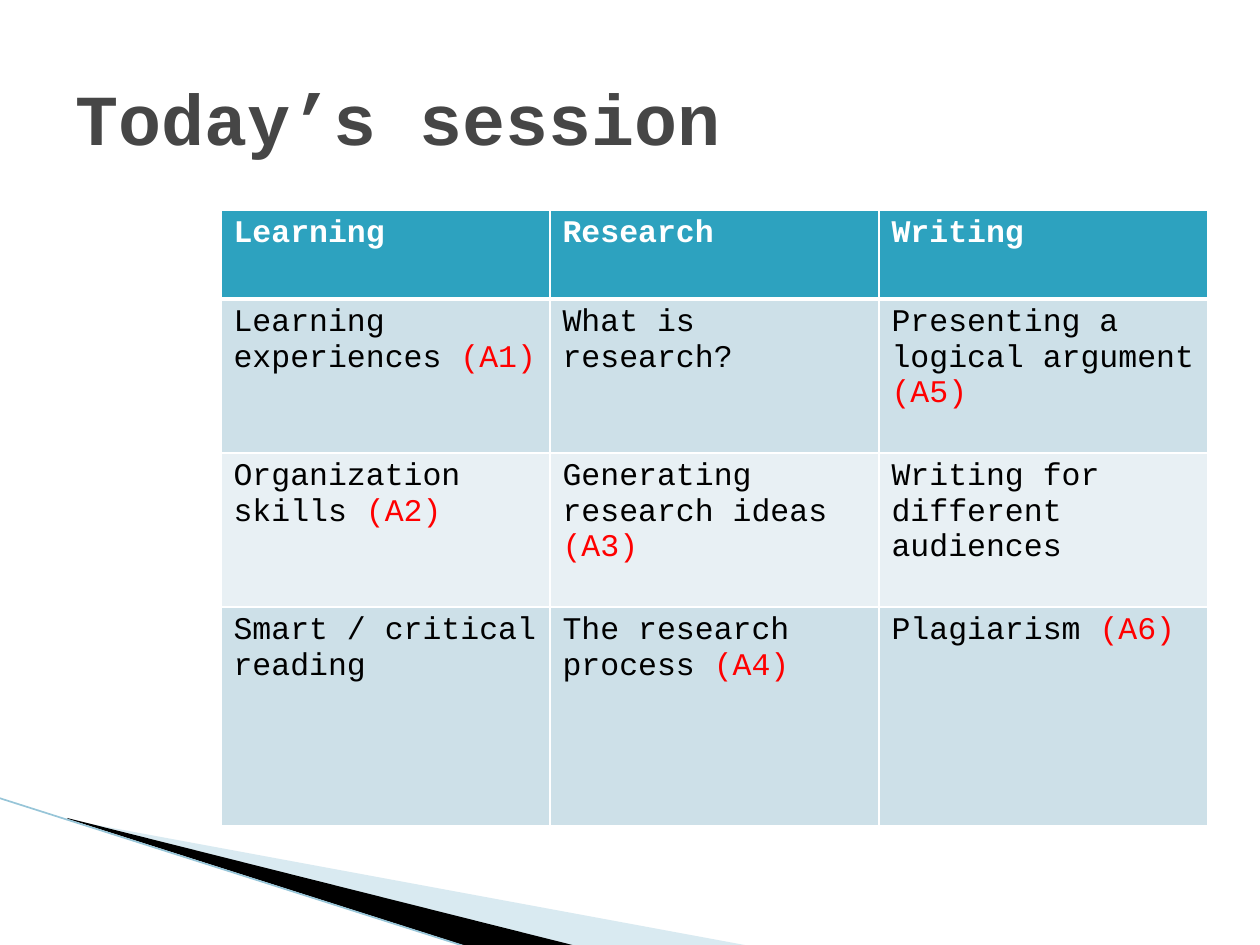
from lxml.etree import SubElement
from pptx import Presentation
from pptx.dml.color import RGBColor
from pptx.enum.shapes import MSO_CONNECTOR
from pptx.enum.text import MSO_ANCHOR
from pptx.oxml import parse_xml
from pptx.oxml.ns import nsdecls, qn
from pptx.util import Pt

TITLE = "Today’s session"
HEADER = ["Learning", "Research", "Writing"]
ROWS = [
    [("Learning experiences ", "(A1)"), ("What is research?", ""),
     ("Presenting a logical argument ", "(A5)")],
    [("Organization skills ", "(A2)"), ("Generating research ideas ", "(A3)"),
     ("Writing for different audiences", "")],
    [("Smart / critical reading", ""), ("The research process ", "(A4)"),
     ("Plagiarism ", "(A6)")],
]
ROW_HEIGHTS = [89, 154, 154, 219]
COL_WIDTH = 329
TABLE_LEFT, TABLE_TOP = 221, 210

WHITE = RGBColor(0xFF, 0xFF, 0xFF)
BLACK = RGBColor(0, 0, 0)
RED = RGBColor(0xFF, 0, 0)
GREY = RGBColor(0x46, 0x46, 0x46)
TEAL = RGBColor(0x2D, 0xA2, 0xBF)
BANDS = [RGBColor(0xCD, 0xE0, 0xE8), RGBColor(0xE8, 0xF0, 0xF4)]
PALE_BLUE = RGBColor(0xA0, 0xCB, 0xDC)
LINE_BLUE = RGBColor(0x97, 0xC5, 0xD8)

WEDGES = [
    ([(69, 820), (750, 946), (575, 946), (69, 819)], PALE_BLUE, 40),
    ([(67, 818), (576, 946), (469, 947), (68, 819)], BLACK, 100),
]
EDGE = (-1, 798, 467, 947)
SCALE = 914400 / 126


def px(n):
    return round(n * SCALE)


def add_run(p, text, size=18, color=BLACK, bold=False):
    r = p.add_run()
    r.text = text
    r.font.name = "Courier New"
    r.font.size = Pt(size)
    r.font.bold = bold
    r.font.color.rgb = color


def add_wedge(s, points, color, opacity):
    fb = s.shapes.build_freeform(*points[0], scale=SCALE)
    fb.add_line_segments(points[1:], close=True)
    sp = fb.convert_to_shape()
    sp.shadow.inherit = False
    sp.line.fill.background()
    sp.fill.solid()
    sp.fill.fore_color.rgb = color
    if opacity < 100:
        clr = sp.fill._xPr.find(".//" + qn("a:srgbClr"))
        SubElement(clr, qn("a:alpha"), val=str(opacity * 1000))


def format_cell(cell, fill, top, bottom):
    cell.fill.solid()
    cell.fill.fore_color.rgb = fill
    widths = {"lnL": 1, "lnR": 1, "lnT": top, "lnB": bottom}
    for i, (tag, width) in enumerate(widths.items()):
        cell._tc.tcPr.insert(i, parse_xml(
            f'<a:{tag} {nsdecls("a")} w="{Pt(width)}"><a:solidFill>'
            f'<a:srgbClr val="{WHITE}"/></a:solidFill></a:{tag}>'))


def main():
    prs = Presentation()
    prs.slide_width, prs.slide_height = px(1260), px(945)
    s = prs.slides.add_slide(prs.slide_layouts[6])

    for wedge in WEDGES:
        add_wedge(s, *wedge)
    edge = s.shapes.add_connector(MSO_CONNECTOR.STRAIGHT, *map(px, EDGE))
    edge.line.color.rgb = LINE_BLUE
    edge.line.width = Pt(0.95)
    SubElement(edge._element.spPr, qn("a:effectLst"))

    tf = s.shapes.add_textbox(px(63), px(38), px(1134), px(157)).text_frame
    tf.word_wrap = True
    tf.vertical_anchor = MSO_ANCHOR.MIDDLE
    add_run(tf.paragraphs[0], TITLE, size=41, color=GREY, bold=True)

    table = s.shapes.add_table(
        len(ROW_HEIGHTS), len(HEADER), px(TABLE_LEFT), px(TABLE_TOP),
        px(COL_WIDTH * len(HEADER)), px(sum(ROW_HEIGHTS))).table
    for col in table.columns:
        col.width = px(COL_WIDTH)
    for row, height in zip(table.rows, ROW_HEIGHTS):
        row.height = px(height)

    for c, text in enumerate(HEADER):
        cell = table.cell(0, c)
        format_cell(cell, TEAL, 1, 3)
        add_run(cell.text_frame.paragraphs[0], text, color=WHITE, bold=True)
    for i, row in enumerate(ROWS):
        for c, (text, activity) in enumerate(row):
            cell = table.cell(i + 1, c)
            format_cell(cell, BANDS[i % 2], 1 if i else 3, 1)
            p = cell.text_frame.paragraphs[0]
            add_run(p, text)
            if activity:
                add_run(p, activity, color=RED)

    prs.save("out.pptx")


if __name__ == "__main__":
    main()
